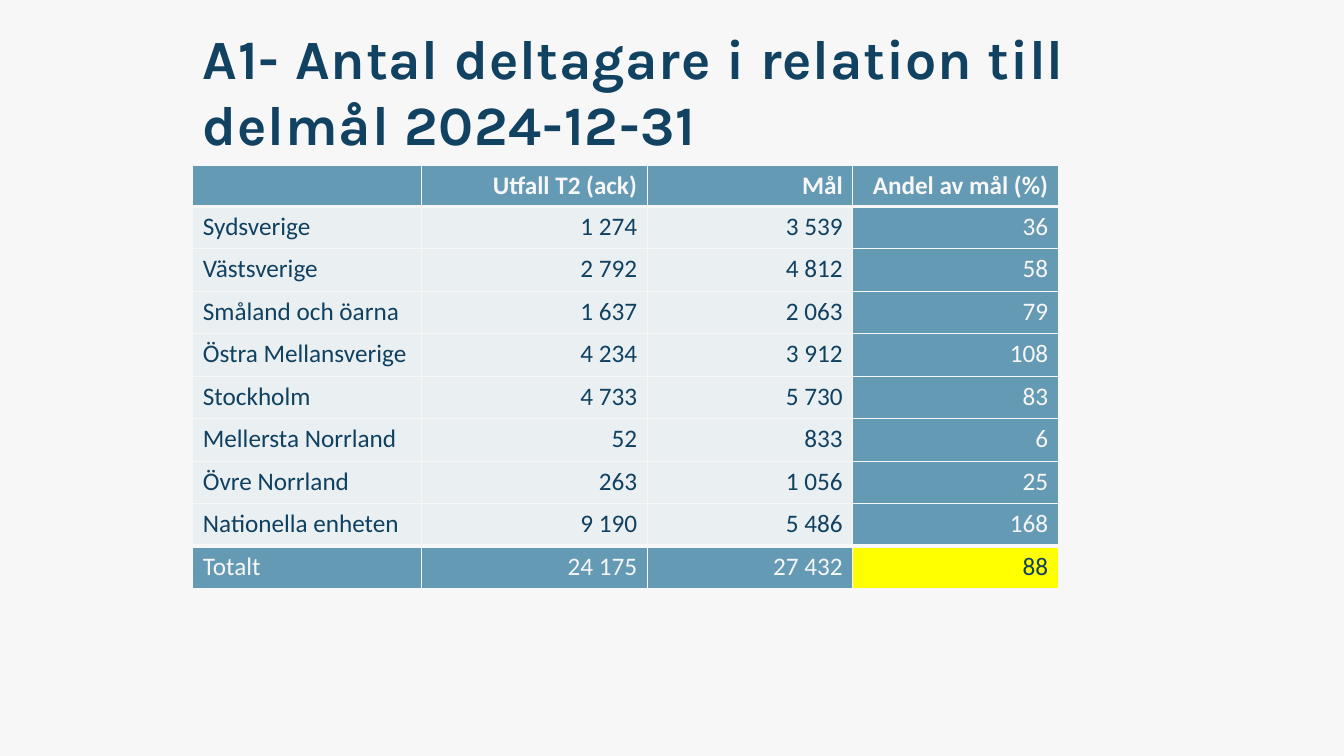
import pptx
import pptx.util
import pptx.dml.color
import pptx.enum.text
import pptx.oxml
import pptx.oxml.ns
from pptx.util import Cm

COLORS = {"paper": "F8F7F7", "title": "124261", "ink": "104161",
          "teal": "649AB3", "pale": "EAEFF2", "mark": "FFFF00"}
RESULTS = [
    ("", "Utfall T2 (ack)", "Mål", "Andel av mål (%)"),
    ("Sydsverige", "1 274", "3 539", "36"),
    ("Västsverige", "2 792", "4 812", "58"),
    ("Småland och öarna", "1 637", "2 063", "79"),
    ("Östra Mellansverige", "4 234", "3 912", "108"),
    ("Stockholm", "4 733", "5 730", "83"),
    ("Mellersta Norrland", "52", "833", "6"),
    ("Övre Norrland", "263", "1 056", "25"),
    ("Nationella enheten", "9 190", "5 486", "168"),
    ("Totalt", "24 175", "27 432", "88"),
]


def rgb(name):
    return pptx.dml.color.RGBColor.from_string(COLORS[name])


class Report:
    """Holds the deck, its current page and the shared style."""

    def __init__(self):
        self.deck = pptx.Presentation()
        self.deck.slide_width, self.deck.slide_height = Cm(33.87), Cm(19.05)
        self.page = self.deck.slides.add_slide(self.deck.slide_layouts[5])
        self.page.background.fill.solid()
        self.page.background.fill.fore_color.rgb = rgb("paper")

    def style(self, para, font, size, color, bold, align):
        para.alignment = align
        para.font.name = font
        para.font.size = pptx.util.Pt(size)
        para.font.bold = bold
        para.font.color.rgb = rgb(color)

    def title(self, text, left, top, width, height):
        box = self.page.shapes.title
        box.left, box.top, box.width, box.height = Cm(left), Cm(top), Cm(width), Cm(height)
        frame = box.text_frame
        frame.text = text
        frame.word_wrap = True
        frame.auto_size = pptx.enum.text.MSO_AUTO_SIZE.NONE
        frame.vertical_anchor = pptx.enum.text.MSO_ANCHOR.MIDDLE
        self.style(frame.paragraphs[0], "Karla", 39.6, "title", True,
                   pptx.enum.text.PP_ALIGN.LEFT)
        span = frame.paragraphs[0].runs[0]
        span.font._element.set("spc", "60")

    def borders(self, cell, top, bottom):
        properties = cell._tc.get_or_add_tcPr()
        widths = (("lnL", 1), ("lnR", 1), ("lnT", top), ("lnB", bottom))
        for index, (side, width) in enumerate(widths):
            properties.insert(index, pptx.oxml.parse_xml(
                f'<a:{side} {pptx.oxml.ns.nsdecls("a")} w="{pptx.util.Pt(width)}"><a:solidFill>'
                f'<a:srgbClr val="{COLORS["paper"]}"/></a:solidFill></a:{side}>'))

    def table(self, rows, left, top, widths, head, height):
        last_row, last_column = len(rows) - 1, len(widths) - 1
        grid = self.page.shapes.add_table(
            len(rows), len(widths), Cm(left), Cm(top), Cm(sum(widths)),
            Cm(head + height * last_row)).table
        for column, width in zip(grid.columns, widths):
            column.width = Cm(width)
        for r, values in enumerate(rows):
            grid.rows[r].height = Cm(height if r else head)
            for c, value in enumerate(values):
                cell = grid.cell(r, c)
                cell.text = value
                fill, ink = "pale", "ink"
                if r in (0, last_row) or c == last_column:
                    fill, ink = "teal", "paper"
                if (r, c) == (last_row, last_column):
                    fill, ink = "mark", "ink"
                cell.fill.solid()
                cell.fill.fore_color.rgb = rgb(fill)
                align = pptx.enum.text.PP_ALIGN.RIGHT if c else pptx.enum.text.PP_ALIGN.LEFT
                self.style(cell.text_frame.paragraphs[0], "Calibri", 18, ink, r == 0, align)
                self.borders(cell, 3 if r in (1, last_row) else 1,
                             3 if r in (0, last_row - 1) else 1)


def main():
    report = Report()
    report.title("A1- Antal deltagare i relation till delmål 2024-12-31", 4.86, 1.02, 22.45, 2.51)
    report.table(RESULTS, 4.86, 4.17, (5.76, 5.69, 5.18, 5.18), 1.02, 1.07)
    report.deck.save("out.pptx")


if __name__ == "__main__":
    main()
